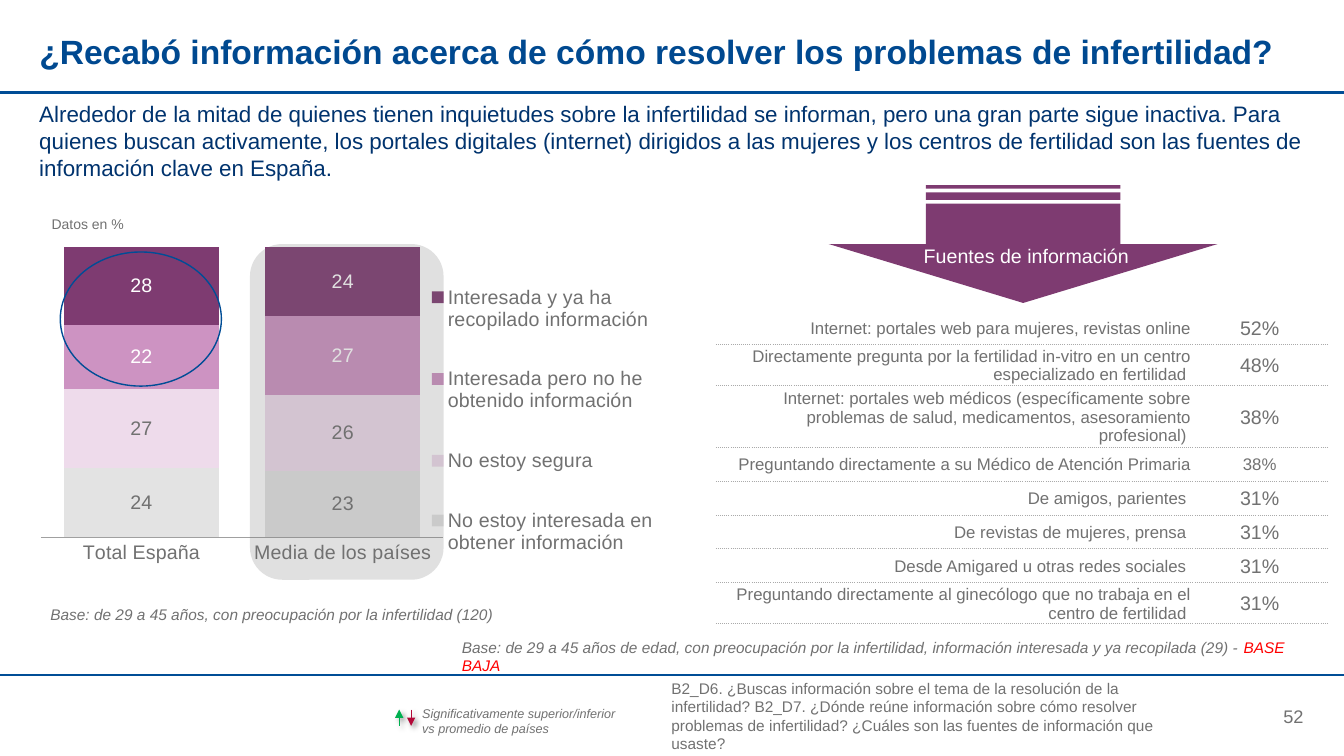
from dataclasses import dataclass
from typing import Optional

from lxml.etree import SubElement
from pptx import Presentation
from pptx.chart.data import CategoryChartData as ChartData
from pptx.dml.color import RGBColor
from pptx.enum.chart import XL_CHART_TYPE as Kind, XL_LEGEND_POSITION as Side
from pptx.enum.chart import XL_TICK_LABEL_POSITION as Tick, XL_TICK_MARK as Mark
from pptx.enum.shapes import MSO_CONNECTOR as Line, MSO_SHAPE as Shape
from pptx.enum.text import MSO_ANCHOR as Anchor, MSO_AUTO_SIZE as Fit, PP_ALIGN as Align
from pptx.oxml import parse_xml
from pptx.oxml.ns import nsdecls, qn
from pptx.util import Cm, Pt

HUES = {
    "title": "004990", "lead": "00336E", "rule": "004D96", "grey": "717171",
    "white": "FFFFFF", "red": "FF0000", "plum": "7E3B71", "dots": "AAAAAA",
    "up": "00B050", "down": "B30838", "axis": "A0A0A0",
}


@dataclass
class Note:
    text: str
    box: tuple[float, float, float, float]
    size: float
    hue: str = "grey"
    align: Align = Align.LEFT
    anchor: Anchor = Anchor.TOP
    slant: bool = False
    bold: bool = False
    wrap: bool = True
    alert: str = ""


@dataclass
class Rule:
    start: tuple[float, float]
    end: tuple[float, float]
    hue: str
    width: float
    arrow: bool = False


@dataclass
class Form:
    kind: Shape
    box: tuple[float, float, float, float]
    fill: Optional[str] = None
    line: Optional[str] = None
    alpha: int = 100
    turn: int = 0


@dataclass
class Band:
    name: str
    vals: tuple[int, int]
    fill: str
    ink: str = "grey"


@dataclass
class Source:
    text: str
    share: str
    size: float = 14
    tall: float = 0.85


TITLE = Note("¿Recabó información acerca de cómo resolver los problemas de infertilidad?",
             (0.99, 0.79, 31.85, 1.12), 24, "title", bold=True)
NOTES = [
    Note("Alrededor de la mitad de quienes tienen inquietudes sobre la infertilidad se informan, pero una gran "
         "parte sigue inactiva. Para quienes buscan activamente, los portales digitales (internet) dirigidos a las "
         "mujeres y los centros de fertilidad son las fuentes de información clave en España.",
         (0.99, 2.52, 31.88, 1.09), 16, "lead"),
    Note("B2_D6. ¿Buscas información sobre el tema de la resolución de la infertilidad? B2_D7. ¿Dónde reúne "
         "información sobre cómo resolver problemas de infertilidad? ¿Cuáles son las fuentes de información que "
         "usaste?", (16.92, 17.76, 12.98, 0.56), 11, anchor=Anchor.MIDDLE),
    Note("52", (30.16, 17.76, 2.69, 0.56), 13, align=Align.RIGHT, anchor=Anchor.MIDDLE),
    Note("Datos en %", (1.04, 5.44, 2.34, 0.43), 10, align=Align.CENTER),
    Note("Base: de 29 a 45 años, con preocupación por la infertilidad (120)",
         (1.27, 15.24, 11.43, 0.48), 11, slant=True),
    Note("Fuentes de información", (23.28, 6.15, 5.33, 0.61), 14, "white", wrap=False),
    Note("Base: de 29 a 45 años de edad, con preocupación por la infertilidad, información interesada y ya "
         "recopilada (29) - ", (11.64, 16.08, 21.79, 0.48), 11, slant=True, alert="BASE BAJA"),
    Note("Significativamente superior/inferior vs promedio de países",
         (10.64, 17.78, 5.08, 0.76), 9, slant=True),
]
RULES = [
    Rule((0, 2.33), (33.87, 2.33), "rule", 1.5),
    Rule((0, 17.02), (33.87, 17.02), "rule", 1.5),
    Rule((10.36, 17.88), (10.36, 18.29), "down", 0.75, True),
    Rule((10.06, 18.29), (10.06, 17.88), "up", 0.75, True),
]
FORMS = [
    Form(Shape.ROUNDED_RECTANGLE, (6.3, 6.15, 4.88, 8.46), "grey", alpha=21),
    Form(Shape.STRIPED_RIGHT_ARROW, (24.3, 1.25, 2.97, 9.8), "plum", turn=90),
    Form(Shape.OVAL, (1.52, 6.35, 4.06, 3.38), line="rule"),
]
BANDS = [
    Band("No estoy interesada en obtener información", (24, 23), "E3E3E3"),
    Band("No estoy segura", (27, 26), "EEDBEB"),
    Band("Interesada pero no he obtenido información", (22, 27), "CD93C2", "white"),
    Band("Interesada y ya ha recopilado información", (28, 24), "7E3B71", "white"),
]
SOURCES = [
    Source("Internet: portales web para mujeres, revistas online", "52%"),
    Source("Directamente pregunta por la fertilidad in-vitro en un centro especializado en fertilidad ", "48%",
           tall=1.04),
    Source("Internet: portales web médicos (específicamente sobre problemas de salud, medicamentos, "
           "asesoramiento profesional) ", "38%", tall=1.56),
    Source("Preguntando directamente a su Médico de Atención Primaria", "38%", 12),
    Source("De amigos, parientes ", "31%"),
    Source("De revistas de mujeres, prensa ", "31%"),
    Source("Desde Amigared u otras redes sociales ", "31%"),
    Source("Preguntando directamente al ginecólogo que no trabaja en el centro de fertilidad ", "31%", tall=1.04),
]


def tint(key: str) -> RGBColor:
    return RGBColor.from_string(HUES.get(key, key))


def style(font, size: float, hue: str = "grey") -> None:
    font.name, font.size = "Arial", Pt(size)
    font.color.rgb = tint(hue)


def write(shape, note: Note) -> None:
    shape.left, shape.top, shape.width, shape.height = map(Cm, note.box)
    frame = shape.text_frame
    frame.text = note.text
    frame.auto_size, frame.word_wrap = Fit.NONE, note.wrap
    frame.vertical_anchor = note.anchor
    frame.margin_left = frame.margin_right = frame.margin_top = frame.margin_bottom = 0
    para = frame.paragraphs[0]
    para.alignment = note.align
    if note.alert:
        para.add_run().text = note.alert
    for run, hue in zip(para.runs, (note.hue, "red")):
        style(run.font, note.size, hue)
        run.font.bold, run.font.italic = note.bold, note.slant


def draw_rule(slide, rule: Rule) -> None:
    line = slide.shapes.add_connector(Line.STRAIGHT, *map(Cm, rule.start + rule.end))
    line.line.color.rgb, line.line.width = tint(rule.hue), Pt(rule.width)
    props = line._element.spPr
    glow = SubElement(props, qn("a:effectLst"))
    if rule.arrow:
        SubElement(props.find(qn("a:ln")), qn("a:tailEnd"), type="triangle")
        cast = SubElement(glow, qn("a:outerShdw"), blurRad=str(Pt(4)), dist=str(Pt(3)), dir="2700000")
        dark = SubElement(cast, qn("a:srgbClr"), val="000000")
        SubElement(dark, qn("a:alpha"), val="40000")


def draw_form(slide, form: Form) -> None:
    shape = slide.shapes.add_shape(form.kind, *map(Cm, form.box))
    shape.shadow.inherit = False
    shape.rotation = form.turn
    if form.fill:
        shape.fill.solid()
        shape.fill.fore_color.rgb = tint(form.fill)
    else:
        shape.fill.background()
    if form.alpha < 100:
        color = shape._element.spPr.find(qn("a:solidFill"))[0]
        SubElement(color, qn("a:alpha"), val=str(form.alpha * 1000))
    if form.line:
        shape.line.color.rgb, shape.line.width = tint(form.line), Pt(1)
    else:
        shape.line.fill.background()


def place(host, x: float, y: float, w: float, h: float, inner: bool = False) -> None:
    target = '<c:layoutTarget val="inner"/>' if inner else ""
    sizes = "".join(f'<c:{tag} val="{val}"/>' for tag, val in zip("xywh", (x, y, w, h)))
    node = parse_xml(f'<c:layout {nsdecls("c")}><c:manualLayout>{target}<c:xMode val="edge"/>'
                     f'<c:yMode val="edge"/>{sizes}</c:manualLayout></c:layout>')
    for old in host.findall(qn("c:layout")):
        host.remove(old)
    host.insert(1 if host.find(qn("c:legendPos")) is not None else 0, node)


def draw_chart(slide) -> None:
    data = ChartData()
    data.categories = ["Total España", "Media de los países"]
    for band in BANDS:
        data.add_series(band.name, band.vals)
    chart = slide.shapes.add_chart(Kind.COLUMN_STACKED, *map(Cm, (0.46, 5.9, 16.31, 9.09)), data).chart
    style(chart.font, 14)
    chart.has_title = False
    chart.has_legend = True
    chart.legend.position, chart.legend.include_in_layout = Side.RIGHT, False
    style(chart.legend.font, 14)
    place(chart.legend._element, 0.63, 0.04, 0.36, 0.95)
    place(chart._chartSpace.chart.plotArea, 0.035, 0.035, 0.622, 0.806, True)
    axis = chart.value_axis
    axis.minimum_scale, axis.maximum_scale, axis.major_unit = 0, 100, 20
    axis.has_major_gridlines = axis.visible = False
    base = chart.category_axis
    base.major_tick_mark, base.tick_label_position = Mark.NONE, Tick.NEXT_TO_AXIS
    base.format.line.color.rgb = tint("axis")
    plot = chart.plots[0]
    plot.gap_width, plot.overlap, plot.vary_by_categories = 30, 100, False
    for band, part in zip(BANDS, plot.series):
        part.format.fill.solid()
        part.format.fill.fore_color.rgb = tint(band.fill)
        part.data_labels.show_value = True
        style(part.data_labels.font, 14, band.ink)


def fill_cell(cell, text: str, size: float, align: Align, sides: str) -> None:
    cell.text = text
    cell.vertical_anchor = Anchor.MIDDLE
    cell.margin_left = cell.margin_right = cell.margin_top = Cm(0.03)
    cell.margin_bottom = 0
    para = cell.text_frame.paragraphs[0]
    para.alignment = align
    style(para.runs[0].font, size)
    props = cell._tc.get_or_add_tcPr()
    for side in "LRTB":
        edge = SubElement(props, qn(f"a:ln{side}"), w=str(Pt(1)))
        if side in sides:
            ink = SubElement(edge, qn("a:solidFill"))
            SubElement(ink, qn("a:srgbClr"), val=HUES["dots"])
            SubElement(edge, qn("a:prstDash"), val="sysDot")
        else:
            SubElement(edge, qn("a:noFill"))
    cell.fill.background()


def draw_table(slide) -> None:
    high = sum(item.tall for item in SOURCES)
    table = slide.shapes.add_table(len(SOURCES), 2, *map(Cm, (18.04, 7.83, 15.4, high))).table
    table.first_row = table.horz_banding = False
    table.columns[0].width, table.columns[1].width = Cm(12.01), Cm(3.39)
    for i, item in enumerate(SOURCES):
        table.rows[i].height = Cm(item.tall)
        sides = "TB" if i else "B"
        fill_cell(table.cell(i, 0), item.text, 12, Align.RIGHT, sides)
        fill_cell(table.cell(i, 1), item.share, item.size, Align.CENTER, sides)


def main() -> None:
    deck = Presentation()
    deck.slide_width, deck.slide_height = Cm(33.87), Cm(19.05)
    slide = deck.slides.add_slide(deck.slide_layouts[5])
    write(slide.shapes.title, TITLE)
    draw_chart(slide)
    draw_table(slide)
    for form in FORMS:
        draw_form(slide, form)
    for rule in RULES:
        draw_rule(slide, rule)
    for note in NOTES:
        write(slide.shapes.add_textbox(0, 0, 0, 0), note)
    deck.save("out.pptx")


if __name__ == "__main__":
    main()
